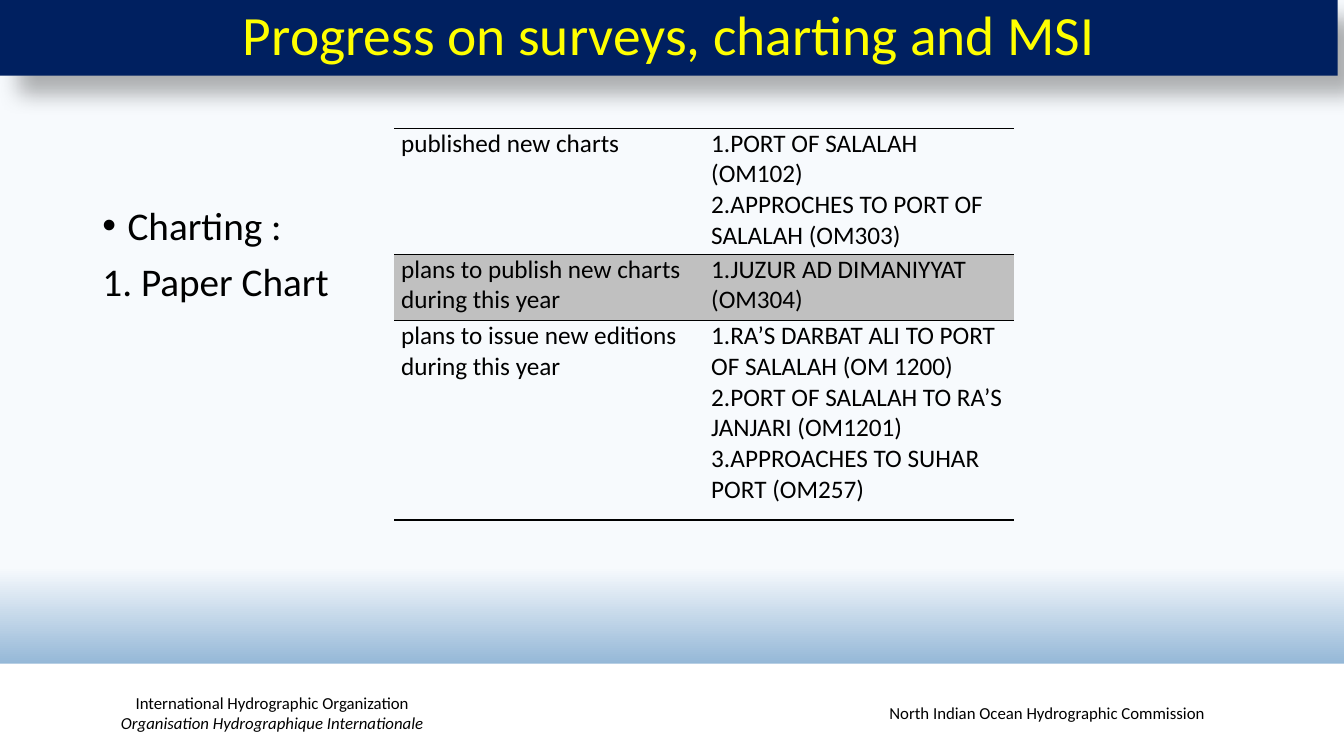
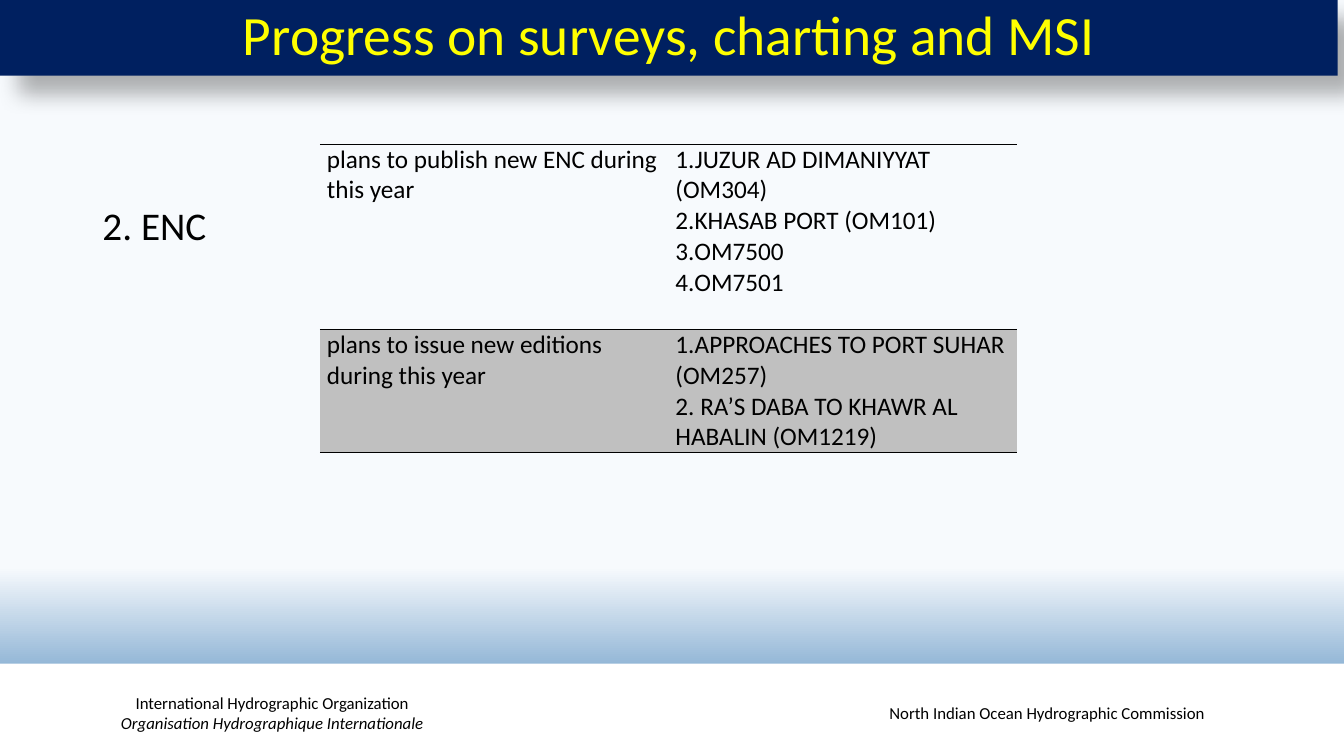
import pptx
import pptx.util
import pptx.dml.color
import pptx.enum.shapes
import pptx.enum.text
import pptx.oxml
import pptx.oxml.ns

Pt = pptx.util.Pt
RGBColor = pptx.dml.color.RGBColor
PP_ALIGN = pptx.enum.text.PP_ALIGN
MIDDLE = pptx.enum.text.MSO_ANCHOR.MIDDLE

WHITE = RGBColor(0xFF, 0xFF, 0xFF)
BLACK = RGBColor(0, 0, 0)
NAVY = RGBColor(0x00, 0x20, 0x60)
YELLOW = RGBColor(0xFF, 0xFF, 0x00)
SILVER = RGBColor(0xC0, 0xC0, 0xC0)
PALE = RGBColor(0xF7, 0xFA, 0xFD)
BLUE = RGBColor(0x34, 0x77, 0xB2)
FONT = "Calibri"
NS = pptx.oxml.ns.nsdecls("a")
PLAIN_TABLE = "{2D5ABB26-0587-4C30-8999-92F81FD0307C}"

TITLE = "Progress on surveys, charting and MSI"
FOOTERS = [
    (32.5, "International Hydrographic Organization\vOrganisation Hydrographique Internationale"),
    (586, "North Indian Ocean Hydrographic Commission"),
]
SLIDES = [
    {
        "body": [("Charting :", True), ("1. Paper Chart", False)],
        "left": 281.5, "top": 91.5, "col": 221.5, "heights": [90, 47.5, 142.5],
        "rows": [
            ("published new charts",
             "1.PORT OF SALALAH (OM102)\n2.APPROCHES TO PORT OF SALALAH (OM303)"),
            ("plans to publish new charts during this year",
             "1.JUZUR AD DIMANIYYAT (OM304)"),
            ("plans to issue new editions during this year",
             "1.RA’S DARBAT ALI TO PORT OF SALALAH (OM 1200)\n"
             "2.PORT OF SALALAH TO RA’S JANJARI (OM1201)\n"
             "3.APPROACHES TO SUHAR PORT (OM257)"),
        ],
    },
    {
        "body": [("2. ENC", False)],
        "left": 228.5, "top": 103, "col": 249, "heights": [132.5, 88],
        "rows": [
            ("plans to publish new ENC during this year",
             "1.JUZUR AD DIMANIYYAT (OM304)\n2.KHASAB PORT (OM101)\n3.OM7500\n4.OM7501"),
            ("plans to issue new editions during this year",
             "1.APPROACHES TO PORT SUHAR (OM257)\n2. RA’S DABA TO KHAWR AL HABALIN (OM1219)"),
        ],
    },
]


def style(p, size, color):
    for r in p.runs:
        r.font.name = FONT
        r.font.size = Pt(size)
        r.font.color.rgb = color


def add_border(cell, side):
    cell.fill.background()
    tcPr = cell._tc.tcPr
    tcPr.insert(len(tcPr) - 1, pptx.oxml.parse_xml(
        f'<a:{side} {NS} w="12700"><a:solidFill><a:srgbClr val="{BLACK}"/>'
        f'</a:solidFill></a:{side}>'))


prs = pptx.Presentation()
prs.slide_width = Pt(960)
prs.slide_height = Pt(540)
slides = [prs.slides.add_slide(prs.slide_layouts[1]) for _ in SLIDES]

master = prs.slide_master
fill = master.background.fill
fill.gradient()
fill.gradient_angle = 270
for stop, position, color in zip(fill.gradient_stops, (0.75, 1), (PALE, BLUE)):
    stop.position = position
    stop.color.rgb = color

band = slides[0].shapes.add_shape(
    pptx.enum.shapes.MSO_SHAPE.RECTANGLE, Pt(0), Pt(474), Pt(960), Pt(66))
band.shadow.inherit = False
band.fill.solid()
band.fill.fore_color.rgb = WHITE
band.line.fill.background()
shared = [band]
for left, text in FOOTERS:
    box = slides[0].shapes.add_textbox(Pt(left), Pt(494.5), Pt(324), Pt(29))
    tf = box.text_frame
    tf.word_wrap = True
    tf.vertical_anchor = MIDDLE
    p = tf.paragraphs[0]
    p.text = text
    p.alignment = PP_ALIGN.CENTER
    style(p, 12, BLACK)
    for r in p.runs[1:]:
        r.font.italic = True
    shared.append(box)
for number, sp in enumerate(shared, 20):
    sp.element.nvSpPr.cNvPr.id = number
    master.shapes.element.append(sp.element)

for s, data in zip(slides, SLIDES):
    title = s.shapes.title
    title.left, title.top, title.width, title.height = Pt(0), Pt(0), Pt(955.5), Pt(54)
    title.fill.solid()
    title.fill.fore_color.rgb = NAVY
    title.line.fill.background()
    title.element.spPr.append(pptx.oxml.parse_xml(
        f'<a:effectLst {NS}><a:outerShdw blurRad="{Pt(15)}" dist="{Pt(18)}" dir="2700000" '
        f'algn="tl" rotWithShape="0"><a:srgbClr val="{BLACK}"><a:alpha val="30000"/>'
        f'</a:srgbClr></a:outerShdw></a:effectLst>'))
    tf = title.text_frame
    tf.text = TITLE
    tf.auto_size = pptx.enum.text.MSO_AUTO_SIZE.NONE
    tf.vertical_anchor = MIDDLE
    p = tf.paragraphs[0]
    p.alignment = PP_ALIGN.CENTER
    p.line_spacing = 0.9
    style(p, 39.6, YELLOW)

    body = s.placeholders[1]
    body.left, body.top, body.width, body.height = Pt(66), Pt(144), Pt(608.5), Pt(170)
    tf = body.text_frame
    tf.text = "\n".join(text for text, _ in data["body"])
    for i, (p, (_, bulleted)) in enumerate(zip(tf.paragraphs, data["body"])):
        pPr = p._p.get_or_add_pPr()
        pPr.set("marL", str(Pt(18)))
        pPr.set("indent", str(-Pt(18)))
        if bulleted:
            pPr.append(pptx.oxml.parse_xml(f'<a:buFont {NS} typeface="Arial"/>'))
            pPr.append(pptx.oxml.parse_xml(f'<a:buChar {NS} char="•"/>'))
        else:
            pPr.append(pptx.oxml.parse_xml(f'<a:buNone {NS}/>'))
        p.line_spacing = 0.9
        p.space_before = Pt(10 if i else 0)
        style(p, 28, BLACK)

    rows = data["rows"]
    frame = s.shapes.add_table(len(rows), 2, Pt(data["left"]), Pt(data["top"]),
                               Pt(2 * data["col"]), Pt(sum(data["heights"])))
    table = frame.table
    table.first_row = False
    table.horz_banding = False
    table._tbl.tblPr.find(pptx.oxml.ns.qn("a:tableStyleId")).text = PLAIN_TABLE
    for column in table.columns:
        column.width = Pt(data["col"])
    for i, texts in enumerate(rows):
        table.rows[i].height = Pt(data["heights"][i])
        for cell, text in zip(table.rows[i].cells, texts):
            cell.margin_left = cell.margin_right = Pt(5)
            cell.margin_top = cell.margin_bottom = Pt(0)
            cell.text_frame.text = text
            for p in cell.text_frame.paragraphs:
                style(p, 18, BLACK)
            if i < 2:
                add_border(cell, "lnT")
            if i == len(rows) - 1:
                add_border(cell, "lnB")
            if i == 1:
                cell.fill.solid()
                cell.fill.fore_color.rgb = SILVER

prs.save("out.pptx")
